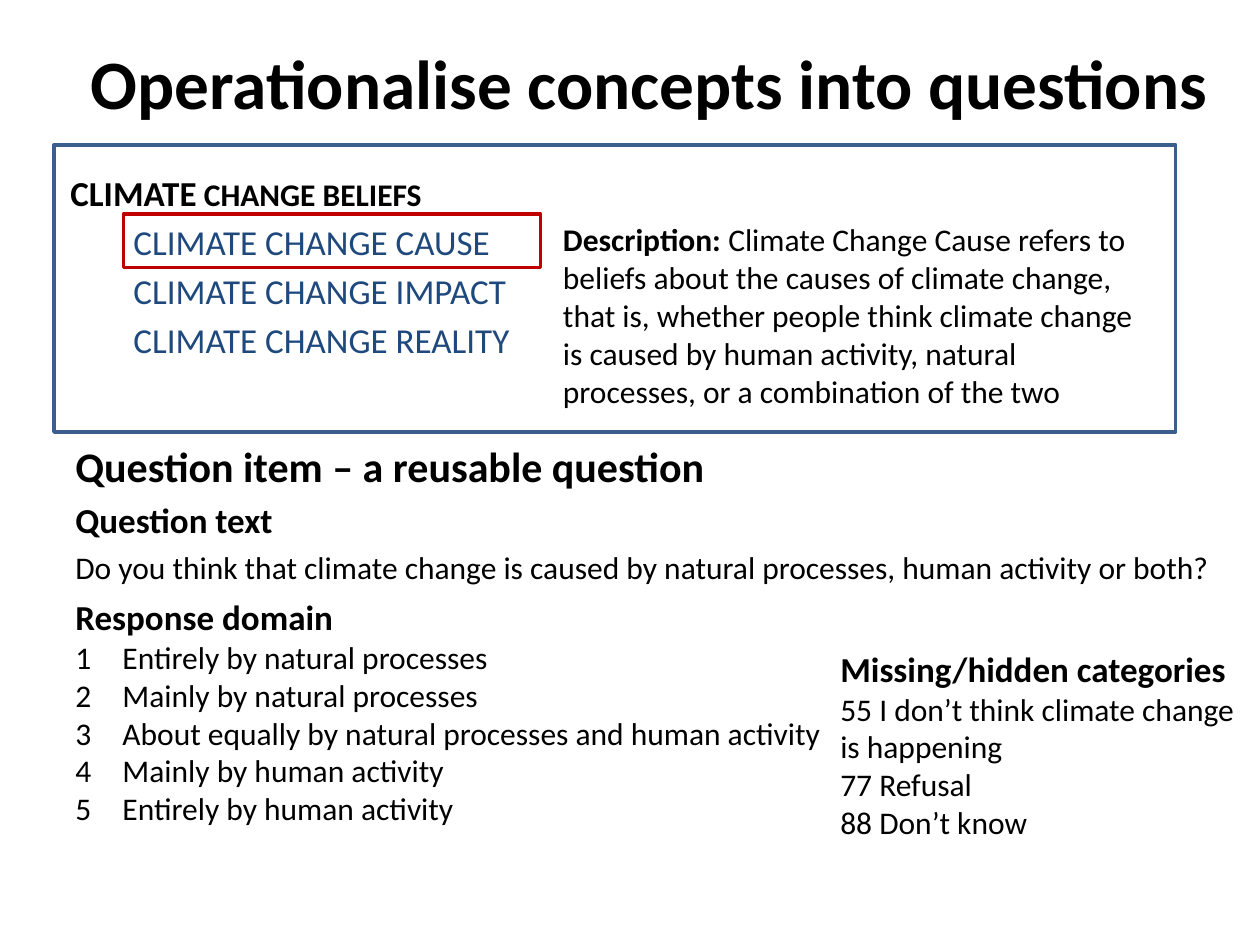
"""Build a slide that turns the concept of climate change beliefs into a survey question."""
from lxml.etree import SubElement
from pptx import Presentation
from pptx.dml.color import RGBColor
from pptx.enum.shapes import MSO_SHAPE as Shape
from pptx.enum.text import MSO_ANCHOR as Anchor, MSO_AUTO_SIZE as AutoSize, PP_ALIGN as Align
from pptx.oxml.ns import qn
from pptx.util import Cm, Pt


def color(code):
    return RGBColor.from_string(code)


def add_text(place, paragraphs, **frame_format):
    box = page.shapes.add_textbox(*map(Cm, place))
    frame = box.text_frame
    for name, value in {"word_wrap": True, **frame_format}.items():
        setattr(frame, name, value)
    for number, (style, spans) in enumerate(paragraphs):
        para = frame.add_paragraph() if number else frame.paragraphs[0]
        for name, value in style.items():
            setattr(para, name, value)
        for text, look in spans:
            span = para.add_run()
            span.text = text
            for name, value in {"name": "Calibri", **look}.items():
                setattr(span.font, name, value)
            span.font.color.rgb = color(BLUE if look is CONCEPT else BLACK)
    return frame


BLACK, BLUE = "000000", "1F497D"
TITLE = {"size": Pt(39.6), "bold": True}
SECTION = {"size": Pt(24), "bold": True}
HEADING = {"size": Pt(20), "bold": True}
STRONG = {"size": Pt(18), "bold": True}
PLAIN = {"size": Pt(18), "bold": False}
CONCEPT = {"size": Pt(20), "bold": False}
TIGHT = {}
SPACED = {"space_before": Pt(4)}
GROW = {"auto_size": AutoSize.SHAPE_TO_FIT_TEXT}
MIDDLE = {"vertical_anchor": Anchor.MIDDLE}

concepts = ["CLIMATE CHANGE CAUSE", "CLIMATE CHANGE IMPACT", "CLIMATE CHANGE REALITY"]
description = (
    "Climate Change Cause refers to beliefs about the causes of climate change, "
    "that is, whether people think climate change is caused by human activity, "
    "natural processes, or a combination of the two"
)
question = "Do you think that climate change is caused by natural processes, human activity or both?"
responses = [
    "Entirely by natural processes",
    "Mainly by natural processes",
    "About equally by natural processes and human activity",
    "Mainly by human activity",
    "Entirely by human activity",
]
missing = ["55 I don’t think climate change", "is happening", "77 Refusal", "88 Don’t know"]

deck = Presentation()
deck.slide_width, deck.slide_height = Cm(25.4), Cm(19.05)
page = deck.slides.add_slide(deck.slide_layouts[6])

add_text(
    (1.09, 0.05, 24, 3.18),
    [({"alignment": Align.CENTER}, [("Operationalise concepts into questions", TITLE)])],
    **MIDDLE,
)

beliefs = add_text(
    (1.17, 3.33, 22.86, 12.57),
    [(SPACED, [("CLIMATE", HEADING), (" CHANGE BELIEFS", STRONG)])]
    + [(SPACED, [(concept, CONCEPT)]) for concept in concepts],
)
for para in beliefs.paragraphs[1:]:
    para.level = 1
    para._p.get_or_add_pPr().set("marL", str(Cm(1.27)))

add_text(
    (11.1, 4.32, 12.19, 4.11),
    [(TIGHT, [("Description: ", STRONG), (description, PLAIN)])],
    **GROW,
)
add_text(
    (1.27, 9.93, 24.26, 12.57),
    [(SPACED, [("Question text", HEADING)]), (SPACED, [(question, PLAIN)])],
)

domain = add_text(
    (1.27, 11.89, 16.05, 5.74),
    [(TIGHT, [("Response domain", HEADING)])]
    + [(TIGHT, [(response, PLAIN)]) for response in responses],
    **GROW,
)
for para in domain.paragraphs[1:]:
    properties = para._p.get_or_add_pPr()
    properties.set("marL", str(Cm(0.95)))
    properties.set("indent", str(-Cm(0.95)))
    SubElement(properties, qn("a:buFont"), typeface="+mj-lt")
    SubElement(properties, qn("a:buAutoNum"), type="arabicPlain")

add_text(
    (16.69, 12.93, 9.6, 4.19),
    [(TIGHT, [("Missing/hidden categories", HEADING)])]
    + [(TIGHT, [(category, PLAIN)]) for category in missing],
    **GROW,
)
add_text(
    (1.27, 7.8, 22.86, 3.18),
    [(TIGHT, [("Question item – a reusable question", SECTION)])],
    **MIDDLE,
)

for place, outline in [
    ((2.49, 4.32, 8.41, 1.07), "C00000"),
    ((1.09, 2.92, 22.61, 5.79), "3A5F8C"),
]:
    box = page.shapes.add_shape(Shape.RECTANGLE, *map(Cm, place))
    box.shadow.inherit = False
    box.fill.background()
    box.line.color.rgb = color(outline)
    box.line.width = Pt(2)

deck.save("out.pptx")
